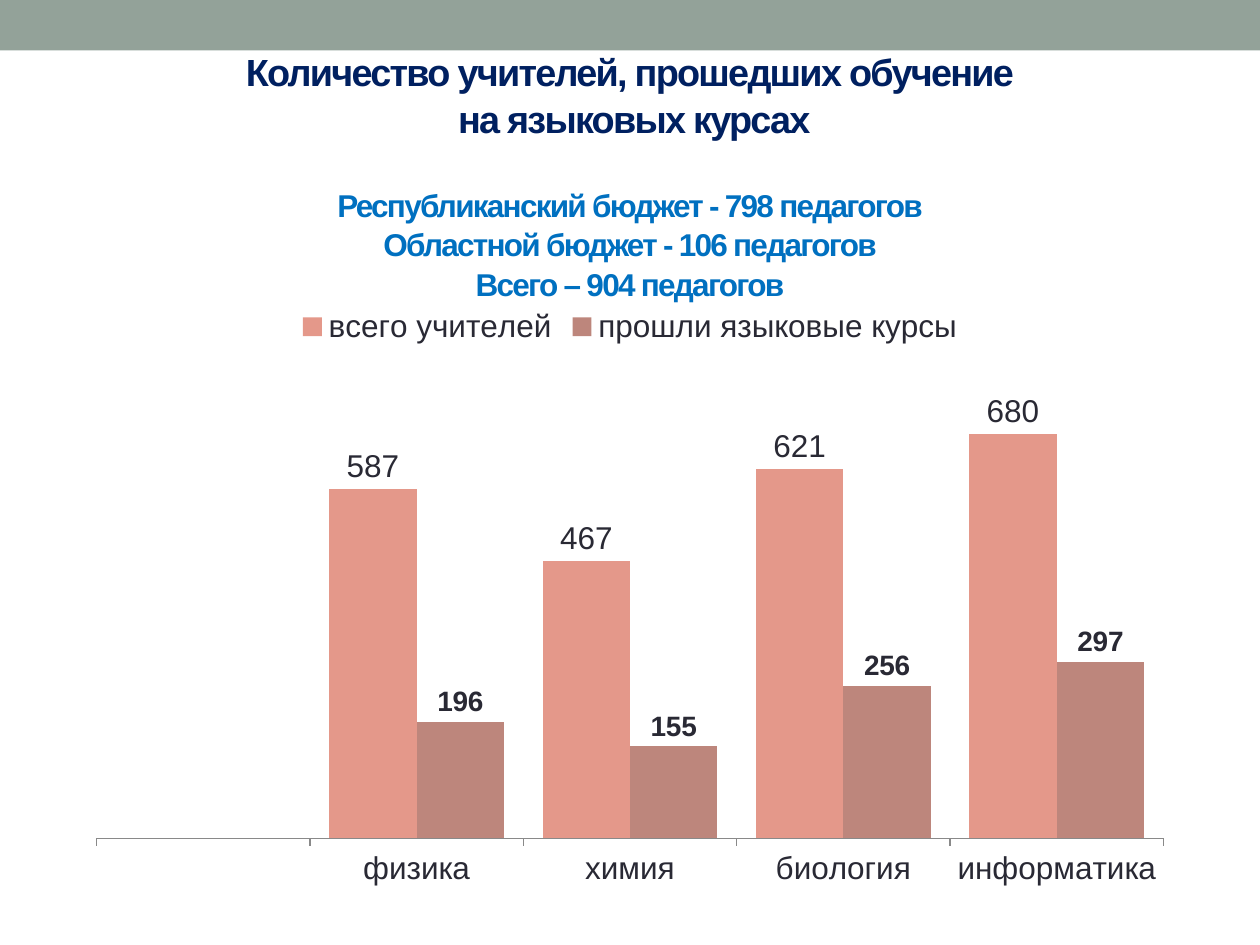
"""Build a slide showing how many teachers completed language courses."""
from dataclasses import dataclass
from typing import Optional

from pptx import Presentation
from pptx.chart.data import CategoryChartData
from pptx.dml.color import RGBColor
from pptx.enum.chart import XL_CHART_TYPE, XL_LABEL_POSITION, XL_LEGEND_POSITION, XL_TICK_MARK
from pptx.enum.shapes import MSO_SHAPE
from pptx.enum.text import MSO_ANCHOR, PP_ALIGN
from pptx.util import Inches, Pt

COLUMNS = XL_CHART_TYPE.COLUMN_CLUSTERED
OUTSIDE_END = XL_LABEL_POSITION.OUTSIDE_END
LEGEND_TOP = XL_LEGEND_POSITION.TOP
TICK_OUT = XL_TICK_MARK.OUTSIDE
RECTANGLE = MSO_SHAPE.RECTANGLE
TOP = MSO_ANCHOR.TOP
CENTER = PP_ALIGN.CENTER


@dataclass(frozen=True)
class Theme:
    font: str = "Arial"
    band: str = "93A299"
    heading: str = "002060"
    budget: str = "0070C0"
    text: str = "292934"
    axis: str = "898989"
    heading_size: float = 21.6
    body_size: float = 18
    accent_size: float = 16


@dataclass(frozen=True)
class TitleBlock:
    lines: tuple[str, ...]
    size: float
    color: str
    space_before: float = 0


@dataclass(frozen=True)
class TeacherSeries:
    name: str
    values: tuple[Optional[int], ...]
    color: str
    label_size: float
    bold: bool = False


THEME = Theme()
TITLE = (
    TitleBlock(("Количество учителей, прошедших обучение", " на языковых курсах"),
               THEME.heading_size, THEME.heading),
    TitleBlock(("Республиканский бюджет - 798 педагогов", "Областной бюджет - 106 педагогов",
                "Всего – 904 педагогов"), THEME.body_size, THEME.budget, 25),
)
SUBJECTS = ("", "физика", "химия", "биология", "информатика")
SERIES = (
    TeacherSeries("всего учителей", (None, 587, 467, 621, 680), "E4988A", THEME.body_size),
    TeacherSeries("прошли языковые курсы", (None, 196, 155, 256, 297), "BD867C",
                  THEME.accent_size, True),
)


def style_font(font, size: float, color: str, bold: bool = False) -> None:
    """Apply the theme typeface with a size, colour and weight."""
    font.name = THEME.font
    font.size = Pt(size)
    font.bold = bold
    font.color.rgb = RGBColor.from_string(color)


def add_band(page) -> None:
    """Draw the band along the top edge."""
    band = page.shapes.add_shape(RECTANGLE, 0, 0, Inches(10), Inches(0.4))
    band.shadow.inherit = False
    band.fill.solid()
    band.fill.fore_color.rgb = RGBColor.from_string(THEME.band)
    band.line.fill.background()


def add_title(page, blocks: tuple[TitleBlock, ...]) -> None:
    """Write each title block as one centred paragraph with line breaks."""
    box = page.shapes.add_textbox(Inches(0.2), Inches(0.37), Inches(9.6), Inches(1.98))
    frame = box.text_frame
    frame.word_wrap = True
    frame.vertical_anchor = TOP
    frame.margin_top = frame.margin_bottom = 0
    for index, block in enumerate(blocks):
        para = frame.add_paragraph() if index else frame.paragraphs[0]
        para.alignment = CENTER
        para.line_spacing = 1.04
        para.space_before = Pt(block.space_before)
        for number, line in enumerate(block.lines):
            if number:
                para.add_line_break()
            span = para.add_run()
            span.text = line
            style_font(span.font, block.size, block.color, True)
            span.font._element.set("spc", "-100")


def style_series(plot_series, series: TeacherSeries) -> None:
    """Colour one series and show its values above the columns."""
    plot_series.format.fill.solid()
    plot_series.format.fill.fore_color.rgb = RGBColor.from_string(series.color)
    plot_series.invert_if_negative = False
    labels = plot_series.data_labels
    labels.show_value = True
    labels.position = OUTSIDE_END
    style_font(labels.font, series.label_size, THEME.text, series.bold)


def add_teacher_chart(page, all_series: tuple[TeacherSeries, ...]) -> None:
    """Add the column chart of teachers by subject."""
    data = CategoryChartData()
    data.categories = SUBJECTS
    for series in all_series:
        data.add_series(series.name, series.values)
    chart = page.shapes.add_chart(
        COLUMNS, Inches(0.59), Inches(2.33), Inches(8.82), Inches(4.8), data).chart
    style_font(chart.font, THEME.body_size, THEME.text)
    chart.has_title = False
    chart.has_legend = True
    chart.legend.position = LEGEND_TOP
    chart.legend.include_in_layout = False
    style_font(chart.legend.font, THEME.body_size, THEME.text)

    chart.value_axis.visible = False
    chart.value_axis.has_major_gridlines = False
    chart.value_axis.minimum_scale = 0
    chart.value_axis.maximum_scale = 800
    category_axis = chart.category_axis
    category_axis.major_tick_mark = TICK_OUT
    category_axis.format.line.color.rgb = RGBColor.from_string(THEME.axis)
    style_font(category_axis.tick_labels.font, THEME.body_size, THEME.text)

    plot = chart.plots[0]
    plot.gap_width = 44
    plot.overlap = 0
    plot.vary_by_categories = False
    for plot_series, series in zip(plot.series, all_series):
        style_series(plot_series, series)


def main() -> None:
    """Assemble and save the deck."""
    deck = Presentation()
    deck.slide_width = Inches(10)
    deck.slide_height = Inches(7.5)
    page = deck.slides.add_slide(deck.slide_layouts[6])
    add_band(page)
    add_title(page, TITLE)
    add_teacher_chart(page, SERIES)
    deck.save("out.pptx")


if __name__ == "__main__":
    main()
